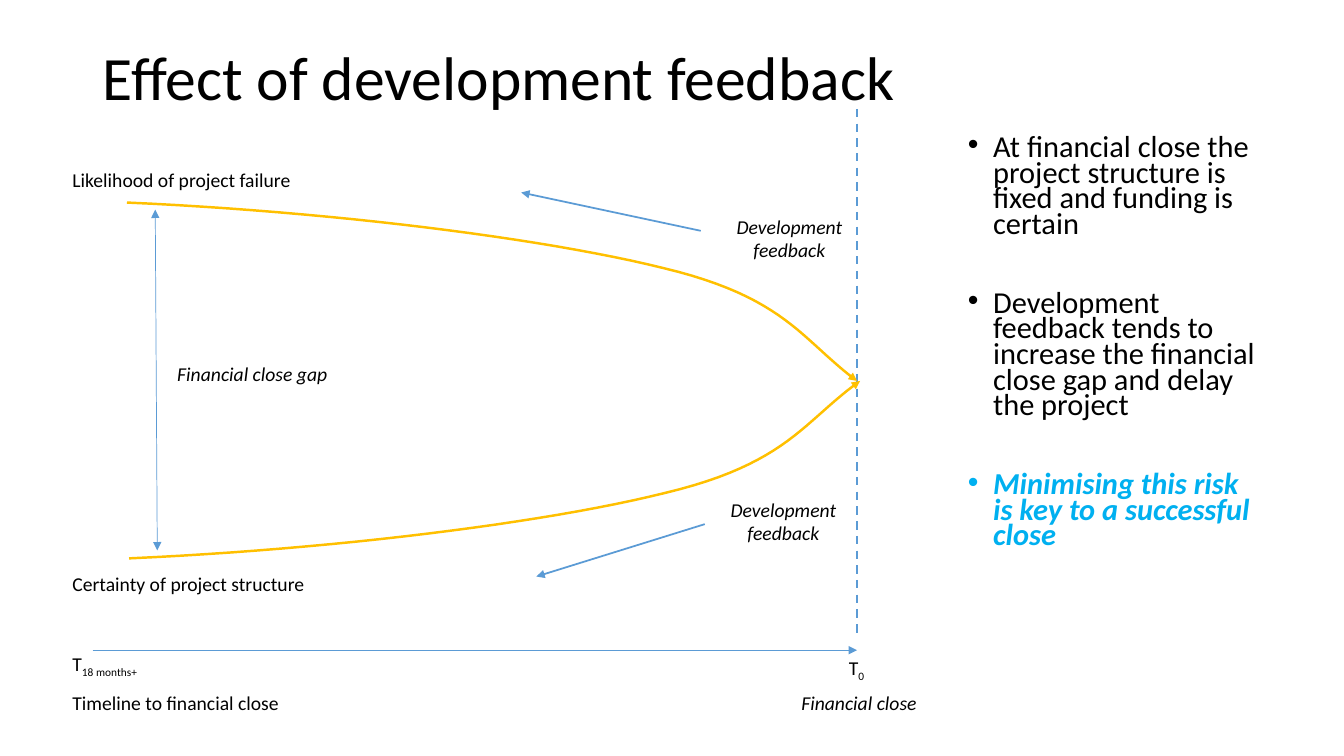
from dataclasses import dataclass

from lxml.etree import SubElement
from pptx import Presentation
from pptx.dml.color import RGBColor
from pptx.enum.dml import MSO_LINE_DASH_STYLE as Dash
from pptx.enum.shapes import MSO_CONNECTOR as Connector
from pptx.enum.text import MSO_ANCHOR as Anchor, MSO_AUTO_SIZE as AutoSize, PP_ALIGN as Align
from pptx.oxml.ns import qn
from pptx.util import Inches, Pt

BLACK = RGBColor(0, 0, 0)
BLUE = RGBColor(0x5B, 0x9B, 0xD5)
AMBER = RGBColor(0xFF, 0xC0, 0x00)
CYAN = RGBColor(0x00, 0xB0, 0xF0)
FONT = "Calibri"
LEFT, CLOSE_X = 0.62, 8.5
CURVE_STEPS = 24

Point = tuple[float, float]


@dataclass
class Label:
    text: str
    left: float
    top: float
    width: float = 6.9
    height: float = 0.34
    italic: bool = False
    align: Align = Align.LEFT
    subscript: str = ""
    wrap: bool = True


@dataclass
class Line:
    start: Point
    end: Point
    width: float
    head: bool = False
    tail: bool = False
    dash: Dash | None = None


@dataclass
class Bullet:
    text: str
    color: RGBColor = BLACK
    strong: bool = False


LABELS = [
    Label("Likelihood of project failure", LEFT, 1.62),
    Label("Certainty of project structure", LEFT, 5.62),
    Label("Timeline to financial close", LEFT, 6.81),
    Label("Financial close gap", 1.66, 3.54, italic=True),
    Label("Financial close", 7.69, 6.81, 1.66, italic=True, align=Align.CENTER),
    Label("Development feedback", 7, 2.08, 1.66, 0.57, True, Align.CENTER),
    Label("Development feedback", 6.94, 4.89, 1.66, 0.57, True, Align.CENTER),
    Label("T", LEFT, 6.42, subscript="18 months+"),
    Label("T", 8.32, 6.46, 0.36, subscript="0", wrap=False),
]
LINES = [
    Line((CLOSE_X, 1.08), (CLOSE_X, 6.28), 1.5, dash=Dash.DASH),
    Line((5.17, 1.91), (6.95, 2.29), 1.25, head=True),
    Line((5.32, 5.72), (6.99, 5.2), 1.25, head=True),
    Line((0.92, 6.45), (CLOSE_X, 6.45), 0.5, tail=True),
    Line((1.54, 2.08), (1.56, 5.46), 0.5, head=True, tail=True),
]
# Each curve is two Bezier segments that share their middle point.
CERTAINTY = [(1.28, 5.54), (3.3, 5.45), (5.4, 5.19), (6.6, 4.89),
             (7.81, 4.6), (7.97, 4.18), (8.53, 3.78)]
FAILURE = [(1.26, 2.01), (3.27, 2.1), (5.37, 2.36), (6.58, 2.66),
           (7.79, 2.95), (7.95, 3.37), (8.5, 3.78)]
BULLETS = [
    Bullet("At financial close the project structure is fixed and funding is certain"),
    Bullet("Development feedback tends to increase the financial close gap and delay the project"),
    Bullet("Minimising this risk is key to a successful close", CYAN, True),
]


def add_run(p, text: str, size: float, color: RGBColor = BLACK,
            bold: bool = False, italic: bool = False):
    r = p.add_run()
    r.text = text
    r.font.name, r.font.size = FONT, Pt(size)
    r.font.bold, r.font.italic = bold, italic
    r.font.color.rgb = color
    return r


def place(sp, left: float, top: float, width: float, height: float) -> None:
    sp.left, sp.top = Inches(left), Inches(top)
    sp.width, sp.height = Inches(width), Inches(height)


def add_arrowheads(sp, head: bool, tail: bool) -> None:
    ln = sp._element.spPr.find(qn("a:ln"))
    for tag, wanted in (("a:headEnd", head), ("a:tailEnd", tail)):
        if wanted:
            SubElement(ln, qn(tag), type="triangle")


def add_title(s) -> None:
    sp = s.shapes.title
    place(sp, 0.92, 0.07, 11.5, 1.45)
    tf = sp.text_frame
    tf.vertical_anchor, tf.auto_size = Anchor.MIDDLE, AutoSize.NONE
    p = tf.paragraphs[0]
    p.alignment, p.line_spacing = Align.LEFT, 0.9
    add_run(p, "Effect of development feedback", 44)


def add_bullets(s) -> None:
    sp = s.placeholders[1]
    place(sp, 9.5, 1.31, 3.06, 4.76)
    tf = sp.text_frame
    tf.auto_size = AutoSize.NONE
    for i, bullet in enumerate(BULLETS):
        p = tf.add_paragraph() if i else tf.paragraphs[0]
        p.line_spacing, p.space_before = 0.7, Pt(38.5 if i else 0)
        pPr = p._p.get_or_add_pPr()
        pPr.set("marL", str(Inches(0.25)))
        pPr.set("indent", str(Inches(-0.25)))
        SubElement(pPr, qn("a:buFont"), typeface="Arial")
        SubElement(pPr, qn("a:buChar"), char="•")
        add_run(p, bullet.text, 21.7, bullet.color, bullet.strong, bullet.strong)


def add_label(s, label: Label) -> None:
    sp = s.shapes.add_textbox(Inches(label.left), Inches(label.top),
                              Inches(label.width), Inches(label.height))
    tf = sp.text_frame
    tf.word_wrap = label.wrap
    p = tf.paragraphs[0]
    p.alignment = label.align
    add_run(p, label.text, 14, italic=label.italic)
    if label.subscript:
        r = add_run(p, label.subscript, 14)
        r._r.get_or_add_rPr().set("baseline", "-25000")


def add_line(s, line: Line) -> None:
    sp = s.shapes.add_connector(Connector.STRAIGHT, *map(Inches, line.start + line.end))
    sp.line.color.rgb, sp.line.width = BLUE, Pt(line.width)
    if line.dash:
        sp.line.dash_style = line.dash
    add_arrowheads(sp, line.head, line.tail)
    SubElement(sp._element.spPr, qn("a:effectLst"))


def bezier(controls: list[Point], t: float) -> Point:
    weights = ((1 - t) ** 3, 3 * t * (1 - t) ** 2, 3 * t ** 2 * (1 - t), t ** 3)
    x, y = (sum(w * c[axis] for w, c in zip(weights, controls)) for axis in (0, 1))
    return x, y


def add_curve(s, controls: list[Point]) -> None:
    points = [bezier(controls[i:i + 4], step / CURVE_STEPS)
              for i in (0, 3) for step in range(1, CURVE_STEPS + 1)]
    builder = s.shapes.build_freeform(*map(Inches, controls[0]))
    builder.add_line_segments([(Inches(x), Inches(y)) for x, y in points], close=False)
    sp = builder.convert_to_shape()
    sp.shadow.inherit = False
    sp.fill.background()
    sp.line.color.rgb, sp.line.width = AMBER, Pt(1.75)
    add_arrowheads(sp, head=False, tail=True)


def main() -> None:
    prs = Presentation()
    prs.slide_width, prs.slide_height = Inches(13.33), Inches(7.5)
    s = prs.slides.add_slide(prs.slide_layouts[1])
    add_title(s)
    add_bullets(s)
    for line in LINES:
        add_line(s, line)
    for curve in (CERTAINTY, FAILURE):
        add_curve(s, curve)
    for label in LABELS:
        add_label(s, label)
    prs.save("out.pptx")


if __name__ == "__main__":
    main()
